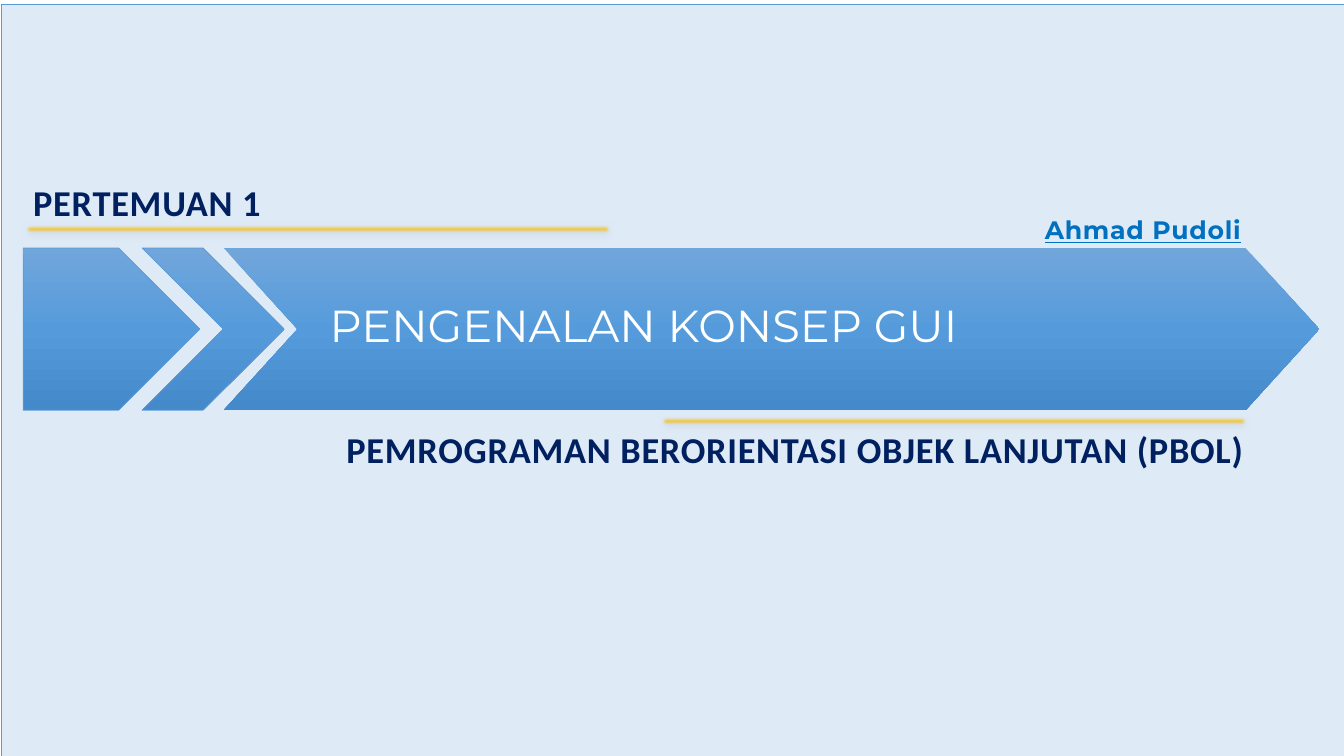
from lxml import etree
from pptx import Presentation
from pptx.dml.color import RGBColor
from pptx.enum.shapes import MSO_SHAPE
from pptx.enum.text import MSO_ANCHOR, MSO_AUTO_SIZE, PP_ALIGN
from pptx.oxml.ns import qn
from pptx.util import Pt

COLORS = {"pale": "DEEBF7", "edge": "5B9BD5", "navy": "002060", "link": "0070C0", "white": "FFFFFF",
          "blue_top": "71A6DB", "blue_mid": "559BDB", "blue_low": "448ACA",
          "gold_top": "FFC64B", "gold_mid": "FFC000", "gold_low": "E3AB00", "shadow": "000000"}

HEADING = {"name": "Calibri", "size": Pt(26), "bold": True}
TITLE = {"name": "Montserrat", "size": Pt(32), "bold": False}
AUTHOR = {"name": "Montserrat", "size": Pt(18), "bold": True, "underline": True}

# Text: role, wording, (left, top, width, height), format, colour, alignment, spacing
TEXTS = [
    ("box", "PERTEMUAN 1", (16.6, 131, 336, 26), HEADING, "navy", PP_ALIGN.LEFT, 50),
    ("subtitle", "PEMROGRAMAN BERORIENTASI OBJEK LANJUTAN (PBOL)",
     (143.3, 307.5, 753, 26), HEADING, "navy", PP_ALIGN.RIGHT, 50),
    ("title", "PENGENALAN KONSEP GUI", (228.2, 190.8, 679, 82), TITLE, "white", PP_ALIGN.LEFT, 0),
    ("box", "Ahmad Pudoli", (642.2, 151.2, 251.3, 26), AUTHOR, "link", PP_ALIGN.RIGHT, 50),
]

# Arrow band: shape, left, width, point depth, outlined
BAND_TOP, BAND_HEIGHT = 177.1, 116
ARROWS = [
    (MSO_SHAPE.PENTAGON, 16.6, 126, 0.5, True),
    (MSO_SHAPE.CHEVRON, 101.5, 101.5, 0.572, True),
    (MSO_SHAPE.CHEVRON, 159.8, 782.6, 0.455, False),
]
RULES = [(18, 160.6), (472.3, 297.4)]
RULE_SIZE = (418.3, 6.5)


def rgb(name):
    return RGBColor.from_string(COLORS[name])


def add_shape(kind, box, outlined=False):
    sp = s.shapes.add_shape(kind, *map(Pt, box))
    sp.shadow.inherit = False
    if outlined:
        sp.line.color.rgb = rgb("edge")
        sp.line.width = Pt(0.5)
    else:
        sp.line.fill.background()
    return sp


def fill_gradient(sp, hue):
    sp.fill.gradient()
    sp.fill.gradient_angle = 270
    stops = sp.fill._fill._gradFill.find(qn("a:gsLst"))
    for stop in list(stops):
        stops.remove(stop)
    for pos, tone in ((0, "top"), (50000, "mid"), (100000, "low")):
        stop = etree.SubElement(stops, qn("a:gs"), pos=str(pos))
        etree.SubElement(stop, qn("a:srgbClr"), val=COLORS[f"{hue}_{tone}"])


def soften(sp):
    effects = sp.element.spPr.find(qn("a:effectLst"))
    shadow = etree.SubElement(effects, qn("a:outerShdw"), blurRad=str(Pt(4.5)), dist=str(Pt(1.5)),
                              dir="5400000", algn="ctr", rotWithShape="0")
    color = etree.SubElement(shadow, qn("a:srgbClr"), val=COLORS["shadow"])
    etree.SubElement(color, qn("a:alpha"), val="63000")
    etree.SubElement(effects, qn("a:softEdge"), rad=str(Pt(2.5)))


prs = Presentation()
prs.slide_width, prs.slide_height = Pt(960), Pt(540)
s = prs.slides.add_slide(prs.slide_layouts[0])
placeholders = {"title": s.shapes.title, "subtitle": s.placeholders[1]}

# Backdrop
backdrop = add_shape(MSO_SHAPE.RECTANGLE, (1, 3, 960, 540), True)
backdrop.fill.solid()
backdrop.fill.fore_color.rgb = rgb("pale")

# Arrow band
for kind, left, width, depth, outlined in ARROWS:
    arrow = add_shape(kind, (left, BAND_TOP, width, BAND_HEIGHT), outlined)
    arrow.adjustments[0] = depth
    fill_gradient(arrow, "blue")

# Gold rules
for left, top in RULES:
    rule = add_shape(MSO_SHAPE.RECTANGLE, (left, top, *RULE_SIZE))
    fill_gradient(rule, "gold")
    soften(rule)

# Texts, each brought in front of the band
for role, words, box, fmt, color, align, spacing in TEXTS:
    sp = placeholders.get(role) or s.shapes.add_textbox(0, 0, 0, 0)
    sp.left, sp.top, sp.width, sp.height = map(Pt, box)
    s.shapes.element.append(sp.element)
    tf = sp.text_frame
    tf.word_wrap = True
    tf.auto_size = MSO_AUTO_SIZE.NONE
    tf.vertical_anchor = MSO_ANCHOR.MIDDLE
    p = tf.paragraphs[0]
    p.alignment = align
    p.space_before = Pt(0)
    r = p.add_run()
    r.text = words
    for key, value in fmt.items():
        setattr(r.font, key, value)
    r.font.color.rgb = rgb(color)
    if spacing:
        r.font._element.set("spc", str(spacing))

prs.save("out.pptx")
